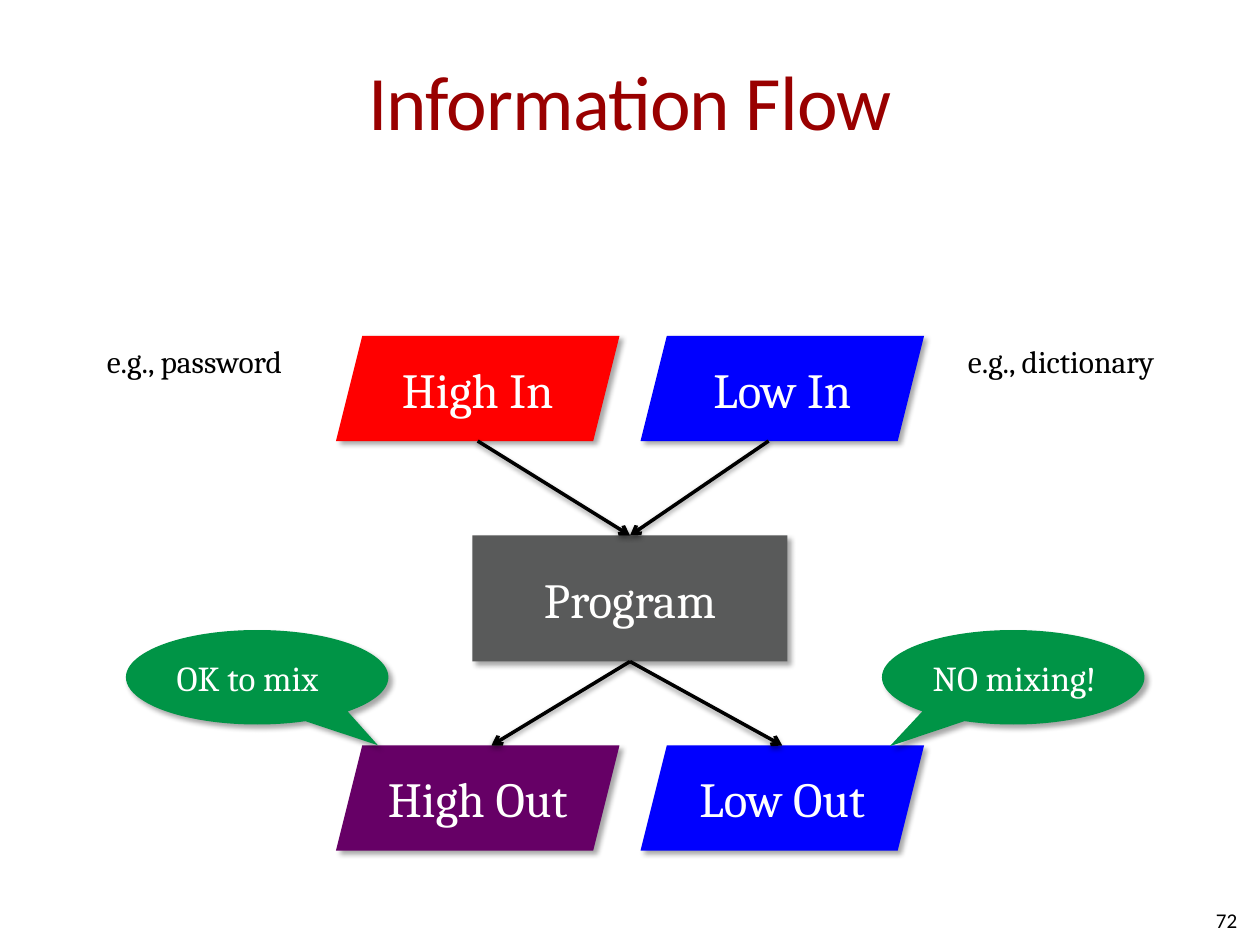
"""Build the Information Flow slide."""
from lxml import etree
from pptx import Presentation
from pptx import util as u
from pptx.dml.color import RGBColor
from pptx.enum import shapes, text
from pptx.oxml.ns import qn

PX = 7620
COLORS = {
    "title": "990000", "ink": "000000", "light": "FFFFFE", "program": "595A5A",
    "high": "FF0000", "low": "0000FF", "mixed": "660066", "callout": "009446",
}
ALIGN = text.PP_ALIGN
SHAPE = shapes.MSO_SHAPE


def px(*values):
    return [u.Emu(v * PX) for v in values]


def rgb(name):
    return RGBColor.from_string(COLORS[name])


def write(tf, content, size, color="ink", font="Cambria", align=ALIGN.LEFT,
          anchor=text.MSO_ANCHOR.MIDDLE, wrap=True, spacing=None):
    tf.word_wrap = wrap
    tf.vertical_anchor = anchor
    p = tf.paragraphs[0]
    p.alignment = align
    r = p.add_run()
    r.text = content
    r.font.size = u.Pt(size)
    r.font.name = font
    r.font.color.rgb = rgb(color)
    if spacing is not None:
        r._r.get_or_add_rPr().set("spc", str(int(spacing * 100)))


def add_shadow(sp, alpha, distance, angle):
    effects = etree.SubElement(sp._element.spPr, qn("a:effectLst"))
    shadow = etree.SubElement(
        effects, qn("a:outerShdw"), blurRad=str(u.Pt(3.1)),
        dist=str(u.Pt(distance)), dir=str(angle * 60000), rotWithShape="0")
    color = etree.SubElement(shadow, qn("a:srgbClr"), val=COLORS["ink"])
    etree.SubElement(color, qn("a:alpha"), val=str(alpha * 1000))


class Deck:
    """Hold the slide style and the current slide."""

    def __init__(self, width, height):
        self.prs = Presentation()
        self.prs.slide_width, self.prs.slide_height = px(width, height)
        self.s = self.prs.slides.add_slide(self.prs.slide_layouts[6])

    def label(self, box, content, size, side_inset=12, grow=False, **fmt):
        tf = self.s.shapes.add_textbox(*px(*box)).text_frame
        tf.margin_left, tf.margin_right = px(side_inset, side_inset)
        write(tf, content, size, **fmt)
        if grow:
            tf.auto_size = text.MSO_AUTO_SIZE.SHAPE_TO_FIT_TEXT

    def shape(self, kind, box, fill, content, size=28, adjust=(), **fmt):
        sp = self.s.shapes.add_shape(kind, *px(*box))
        for i, value in enumerate(adjust):
            sp.adjustments[i] = value
        sp.fill.solid()
        sp.fill.fore_color.rgb = rgb(fill)
        sp.line.fill.background()
        add_shadow(sp, alpha=35, distance=2.8, angle=45)
        write(sp.text_frame, content, size, color="light", **fmt)

    def arrow(self, start, end):
        line = self.s.shapes.add_connector(
            shapes.MSO_CONNECTOR.STRAIGHT, *px(*start, *end))
        line.line.color.rgb = rgb("ink")
        line.line.width = u.Pt(2)
        etree.SubElement(line.line._get_or_add_ln(), qn("a:tailEnd"), type="arrow")
        add_shadow(line, alpha=38, distance=1.6, angle=90)

    def save(self):
        self.prs.save("out.pptx")


def main():
    deck = Deck(1200, 900)
    deck.label((60, 20, 1080, 150), "Information Flow", 44, side_inset=0,
               color="title", font="Calibri", align=ALIGN.CENTER, spacing=-0.5)
    deck.label((910, 852, 280, 48), "72", 12, font="Calibri", align=ALIGN.RIGHT)

    left, right, top, bottom = 320, 610, 320, 710
    deck.shape(SHAPE.RECTANGLE, (450, 510, 300, 120), "program", "Program",
               align=ALIGN.CENTER)
    for x, y, fill, content in (
            (left, top, "high", "High In"), (right, top, "low", "Low In"),
            (left, bottom, "mixed", "High Out"), (right, bottom, "low", "Low Out")):
        deck.shape(SHAPE.PARALLELOGRAM, (x, y, 270, 100), fill, content,
                   align=ALIGN.CENTER)

    for x, content, tip in ((120, "OK to mix", (0.46, 0.72)),
                            (840, "NO mixing!", (-0.47, 0.73))):
        deck.shape(SHAPE.OVAL_CALLOUT, (x, 600, 250, 90), "callout", content,
                   size=20, adjust=tip, wrap=False)

    for x in (455, 732):
        deck.arrow((x, top + 100), (600, 510))
    for x in (468, 745):
        deck.arrow((600, 630), (x, bottom))

    for x, width, content in ((90, 206, "e.g., password"),
                              (910, 212, "e.g., dictionary")):
        deck.label((x, top, width, 48), content, 18, grow=True, wrap=False,
                   anchor=text.MSO_ANCHOR.TOP)
    deck.save()


if __name__ == "__main__":
    main()
